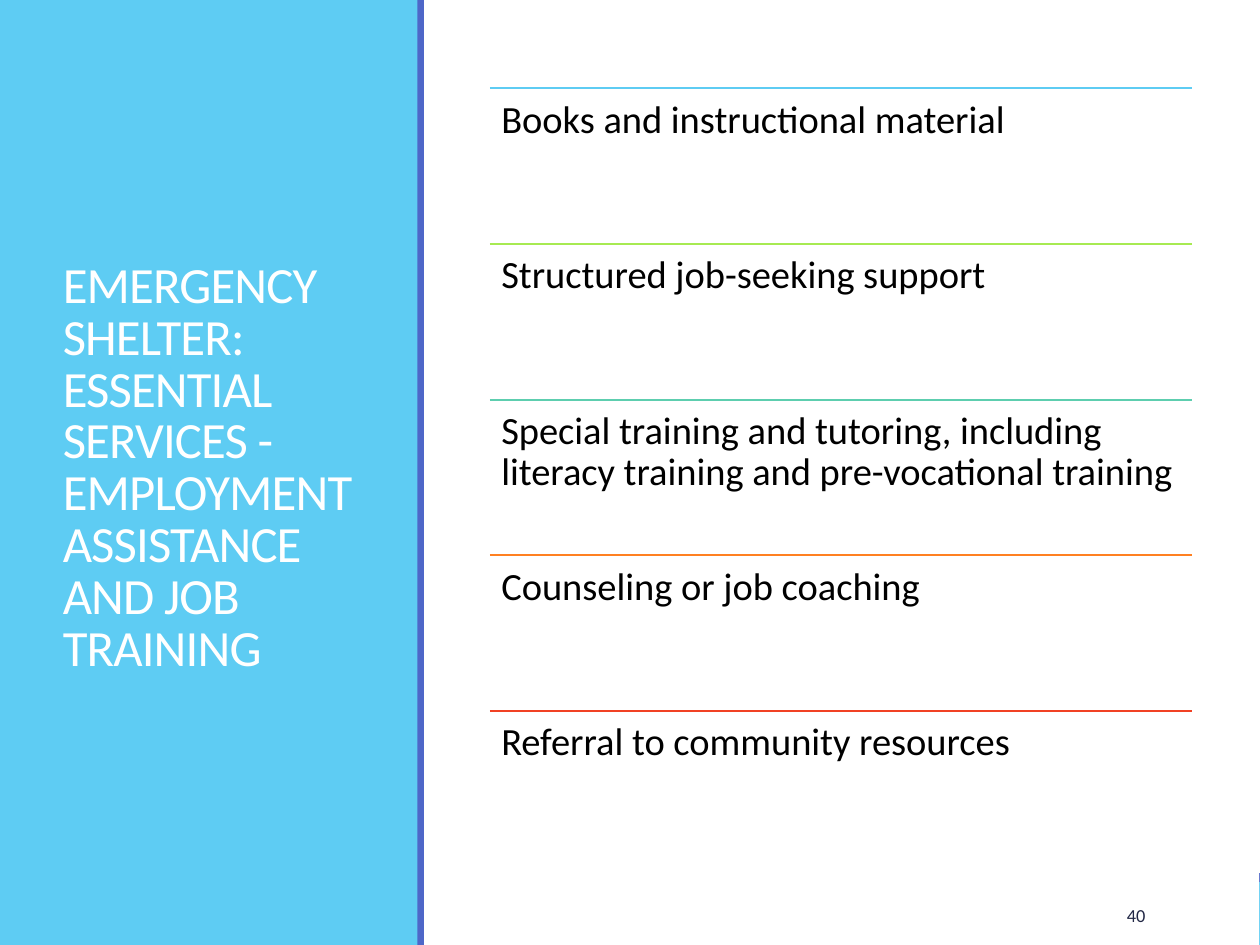
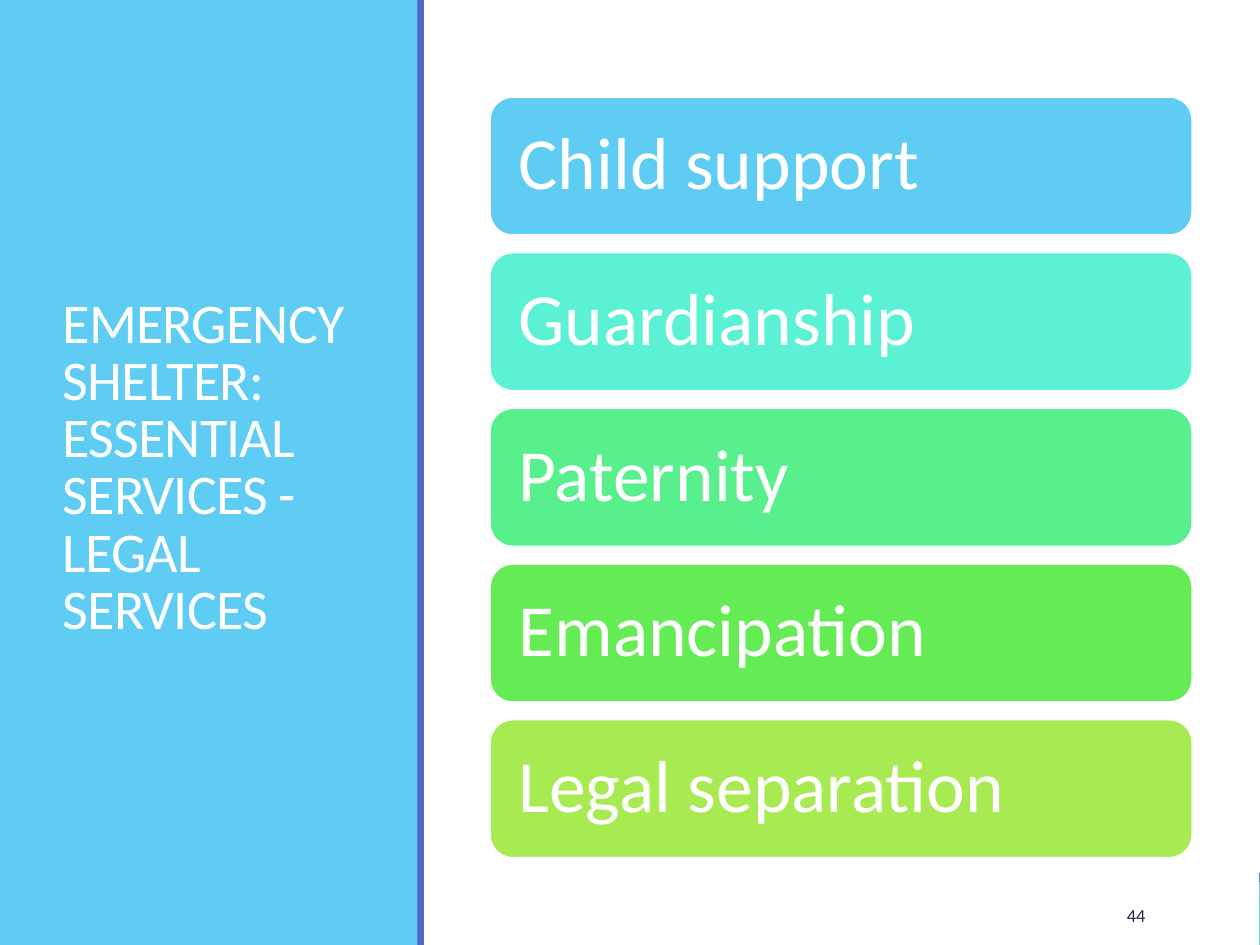
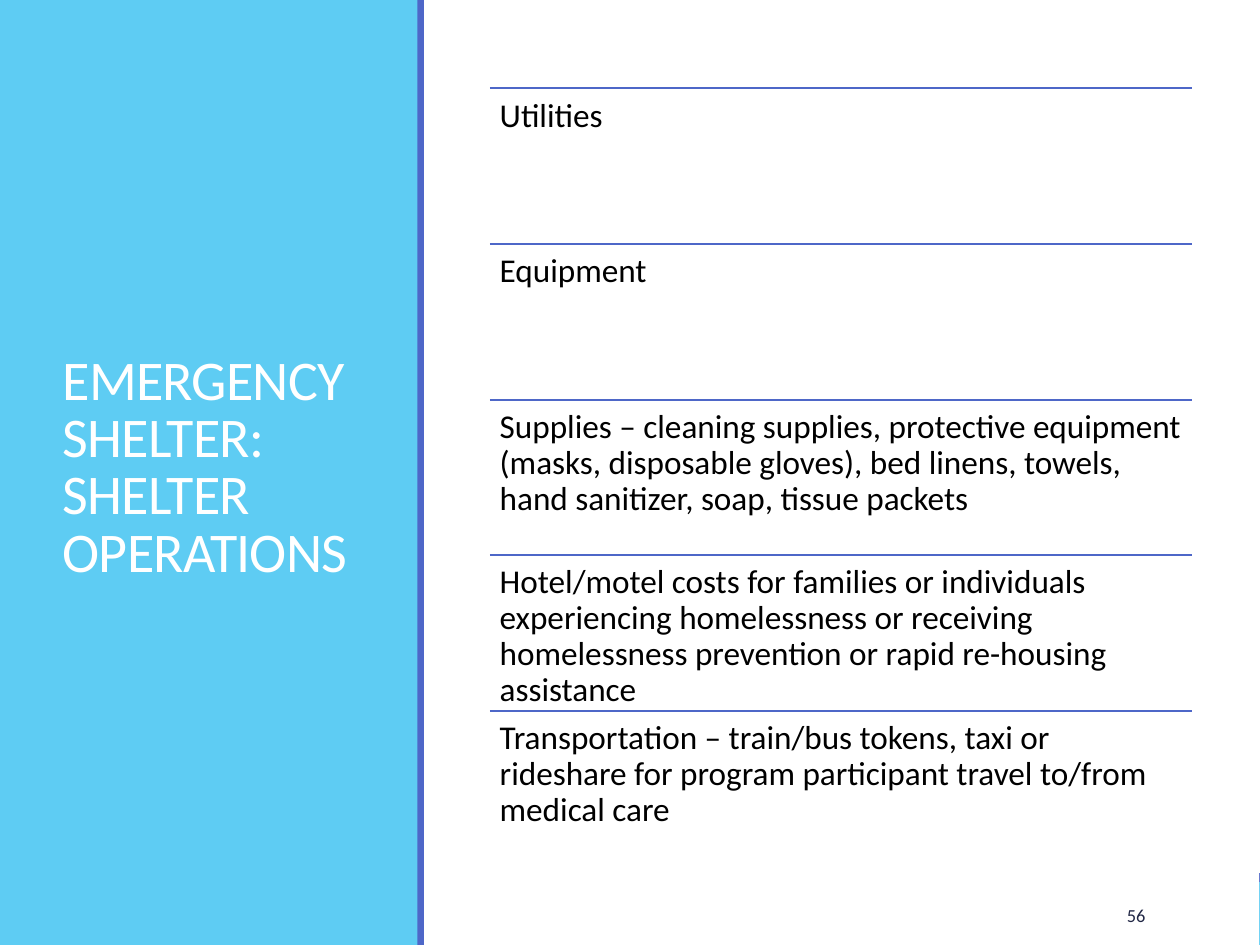
from dataclasses import dataclass
from typing import Optional

from lxml import etree
from pptx import Presentation
from pptx.dml.color import RGBColor
from pptx.enum import shapes, text
from pptx.oxml.ns import qn
from pptx.util import Pt

# Colours
WHITE = RGBColor(0xFF, 0xFF, 0xFF)
BLACK = RGBColor(0, 0, 0)
NAVY = RGBColor(0x21, 0x27, 0x45)
SKY = RGBColor(0x5E, 0xCC, 0xF3)
INDIGO = RGBColor(0x4E, 0x67, 0xC8)
LIME = RGBColor(0xA7, 0xEA, 0x52)
TEAL = RGBColor(0x5D, 0xCE, 0xAF)
ORANGE = RGBColor(0xFF, 0x80, 0x21)
RED = RGBColor(0xF1, 0x41, 0x24)
AQUA = RGBColor(0x5B, 0xF1, 0xD4)
MINT = RGBColor(0x58, 0xEF, 0x8D)
GREEN = RGBColor(0x65, 0xEC, 0x55)

# Shared measures, in points
FONT = "Calibri"
WIDE, HIGH = 720, 540
LEFT, SPAN = 279.9, 401.5
STEP = 88.95
RULE_TOP, CARD_TOP, CARD_HIGH = 50.5, 55.3, 79.2
STROKE = 1.25


@dataclass(frozen=True)
class Box:
    x: float
    y: float
    w: float
    h: float


@dataclass(frozen=True)
class Style:
    size: float
    color: RGBColor
    lines: float = 1.0
    pad: Optional[float] = None
    anchor: text.MSO_ANCHOR = text.MSO_ANCHOR.MIDDLE
    align: text.PP_ALIGN = text.PP_ALIGN.LEFT
    after: float = 0
    track: int = 0


@dataclass(frozen=True)
class Item:
    label: str
    color: RGBColor


@dataclass(frozen=True)
class Page:
    title: str
    size: float
    number: str
    items: list[Item]
    body: Style
    cards: bool = False


# Parts that lie behind the content, from back to front
BANDS = [
    (Box(0, 504, WIDE, 36), SKY),
    (Box(0, 499, WIDE, 5), INDIGO),
    (Box(0, 0, 719.5, HIGH), WHITE),
    (Box(0, 0, 239, HIGH), SKY),
    (Box(238.5, 0, 3.8, HIGH), INDIGO),
]
TITLE = Box(28.8, 41, 182.2, 454.3)
NUMBER = Box(597.6, 508.3, 64, 28.8)
NUM_STYLE = Style(10.5, NAVY, align=text.PP_ALIGN.RIGHT, after=6)
CARD_STYLE = Style(42, WHITE, lines=0.9, pad=12.6)


def row_style(size: float, pad: float) -> Style:
    return Style(size, BLACK, lines=0.9, pad=pad, anchor=text.MSO_ANCHOR.TOP)


def write(shape, words: str, style: Style) -> None:
    frame = shape.text_frame
    frame.word_wrap = True
    frame.vertical_anchor = style.anchor
    if style.pad is not None:
        frame.margin_left = frame.margin_right = Pt(style.pad)
        frame.margin_top = frame.margin_bottom = Pt(style.pad)
    para = frame.paragraphs[0]
    para.alignment = style.align
    para.line_spacing = style.lines
    para.space_after = Pt(style.after)
    for i, part in enumerate(words.split("\n")):
        if i:
            para.add_line_break()
        run = para.add_run()
        run.text = part
        run.font.name = FONT
        run.font.size = Pt(style.size)
        run.font.color.rgb = style.color
        if style.track:
            run.font._element.set("spc", str(style.track))


def add_text(slide, box: Box, words: str, style: Style) -> None:
    shape = slide.shapes.add_textbox(Pt(box.x), Pt(box.y), Pt(box.w), Pt(box.h))
    write(shape, words, style)


def add_block(slide, box: Box, fill: RGBColor, kind=shapes.MSO_SHAPE.RECTANGLE):
    shape = slide.shapes.add_shape(kind, Pt(box.x), Pt(box.y), Pt(box.w), Pt(box.h))
    shape.shadow.inherit = False
    shape.fill.solid()
    shape.fill.fore_color.rgb = fill
    shape.line.fill.background()
    return shape


def add_row(slide, item: Item, rank: int, style: Style) -> None:
    top = RULE_TOP + rank * STEP
    rule = slide.shapes.add_connector(
        shapes.MSO_CONNECTOR.STRAIGHT, Pt(LEFT), Pt(top), Pt(LEFT + SPAN), Pt(top))
    rule.line.color.rgb = item.color
    rule.line.width = Pt(STROKE)
    etree.SubElement(rule._element.spPr, qn("a:effectLst"))
    add_text(slide, Box(LEFT, top, SPAN, STEP), item.label, style)


def add_card(slide, item: Item, rank: int, style: Style) -> None:
    box = Box(LEFT, CARD_TOP + rank * STEP, SPAN, CARD_HIGH)
    card = add_block(slide, box, item.color, shapes.MSO_SHAPE.ROUNDED_RECTANGLE)
    card.line.color.rgb = WHITE
    card.line.width = Pt(STROKE)
    write(card, item.label, style)


def add_page(deck, page: Page) -> None:
    slide = deck.slides.add_slide(deck.slide_layouts[6])
    for box, fill in BANDS:
        add_block(slide, box, fill)
    add_text(slide, TITLE, page.title, Style(page.size, WHITE, lines=0.85, track=-50))
    add_text(slide, NUMBER, page.number, NUM_STYLE)
    draw = add_card if page.cards else add_row
    for rank, item in enumerate(page.items):
        draw(slide, item, rank, page.body)


PAGES = [
    Page(
        "EMERGENCY SHELTER: ESSENTIAL SERVICES - EMPLOYMENT ASSISTANCE AND JOB TRAINING",
        29, "40",
        [
            Item("Books and instructional material", SKY),
            Item("Structured job-seeking support", LIME),
            Item("Special training and tutoring, including literacy training "
                 "and pre-vocational training", TEAL),
            Item("Counseling or job coaching", ORANGE),
            Item("Referral to community resources", RED),
        ],
        row_style(22, 6.6),
    ),
    Page(
        "EMERGENCY SHELTER: ESSENTIAL SERVICES - LEGAL SERVICES",
        32, "44",
        [
            Item("Child support", SKY),
            Item("Guardianship", AQUA),
            Item("Paternity", MINT),
            Item("Emancipation", GREEN),
            Item("Legal separation", LIME),
        ],
        CARD_STYLE, cards=True,
    ),
    Page(
        "EMERGENCY SHELTER:\nSHELTER OPERATIONS",
        32, "56",
        [Item(label, INDIGO) for label in (
            "Utilities",
            "Equipment",
            "Supplies – cleaning supplies, protective equipment (masks, disposable "
            "gloves), bed linens, towels, hand sanitizer, soap, tissue packets",
            "Hotel/motel costs for families or individuals experiencing homelessness "
            "or receiving homelessness prevention or rapid re-housing assistance",
            "Transportation – train/bus tokens, taxi or rideshare for program "
            "participant travel to/from medical care",
        )],
        row_style(19, 5.7),
    ),
]


def main() -> None:
    deck = Presentation()
    deck.slide_width, deck.slide_height = Pt(WIDE), Pt(HIGH)
    for page in PAGES:
        add_page(deck, page)
    deck.save("out.pptx")


if __name__ == "__main__":
    main()
